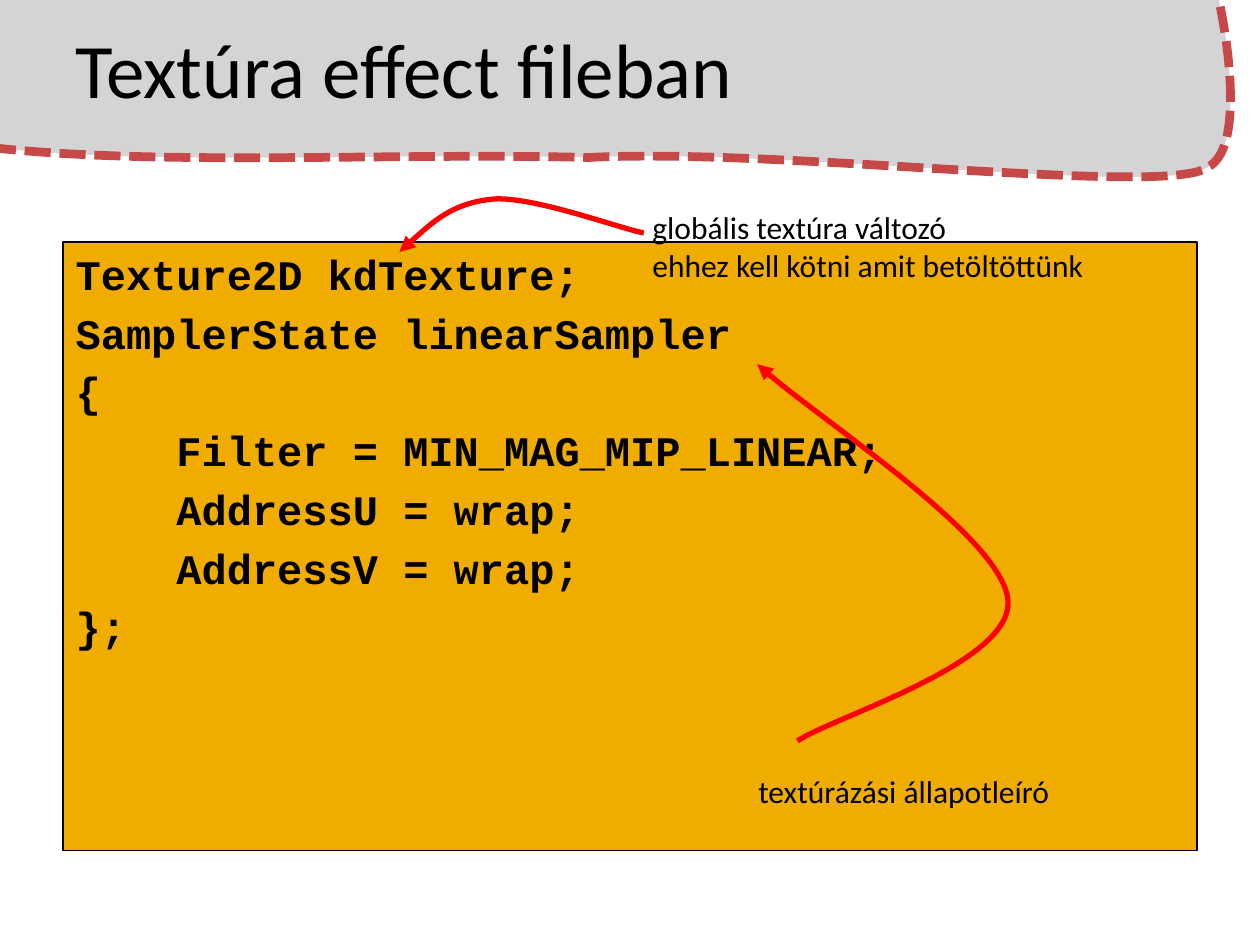
from lxml import etree
from pptx import Presentation
from pptx.dml.color import RGBColor
from pptx.enum.dml import MSO_LINE
from pptx.enum.text import MSO_ANCHOR, MSO_AUTO_SIZE, PP_ALIGN
from pptx.oxml.ns import qn
from pptx.util import Inches, Pt

LEFT, MIDDLE, TOP = PP_ALIGN.LEFT, MSO_ANCHOR.MIDDLE, MSO_ANCHOR.TOP
NO_FIT, GROW = MSO_AUTO_SIZE.NONE, MSO_AUTO_SIZE.SHAPE_TO_FIT_TEXT
SHORT_DASH = MSO_LINE.SQUARE_DOT

THEME = {
    "ink": RGBColor(0, 0, 0),
    "code_fill": RGBColor(0xF0, 0xAD, 0x00),
    "arrow": RGBColor(0xFF, 0, 0),
    "banner": RGBColor(0xD4, 0xD4, 0xD6),
    "stitch": RGBColor(0xC6, 0x48, 0x47),
    "text_font": "Calibri",
    "code_font": "Courier New",
    "title": Pt(44),
    "code": Pt(24),
    "note": Pt(18),
}


def add_curve(points, color, width, corners=()):
    """Draw cubic segments through points (start, then control, control, end);
    corners, if given, continue with straight sides and close the outline."""
    places = [(Inches(x), Inches(y)) for x, y in (*points, *corners)]
    builder = slide.shapes.build_freeform(*places[0], scale=1.0)
    builder.add_line_segments(places[1:], close=bool(corners))
    curve = builder.convert_to_shape()
    sides = list(curve.element.iter(qn("a:lnTo")))
    for first in range(0, len(points) - 1, 3):
        start, *others = sides[first:first + 3]
        start.tag = qn("a:cubicBezTo")
        for side in others:
            start.append(side[0])
            side.getparent().remove(side)
    curve.shadow.inherit = False
    curve.fill.background()
    curve.line.color.rgb = color
    curve.line.width = Pt(width)
    return curve


def style_font(paragraph, face, size, bold=False):
    font = paragraph.font
    font.name, font.size, font.bold = THEME[face], THEME[size], bold
    font.color.rgb = THEME["ink"]
    paragraph.alignment = LEFT


deck = Presentation()
deck.slide_width, deck.slide_height = Inches(10), Inches(7.5)
slide = deck.slides.add_slide(deck.slide_layouts[1])
margin, content_width = Inches(0.5), Inches(9)

# Banner behind the title
banner = add_curve(
    [(-0.08, 1.17), (1.27, 1.32), (3.13, 1.21), (4.67, 1.25),
     (6.18, 1.17), (9.26, 1.56), (9.58, 1.33),
     (9.95, 1.16), (9.67, -0.15), (9.58, -0.33)],
    THEME["stitch"], 5, corners=[(-0.08, -0.33)])
banner.fill.solid()
banner.fill.fore_color.rgb = THEME["banner"]
banner.line.dash_style = SHORT_DASH
slide.shapes.title.element.addprevious(banner.element)

# Title
title = slide.shapes.title
title.left, title.top, title.width, title.height = margin, 0, content_width, Inches(1.25)
title.text_frame.text = "Textúra effect fileban"
title.text_frame.vertical_anchor = MIDDLE
title.text_frame.auto_size = NO_FIT
heading = title.text_frame.paragraphs[0]
heading.line_spacing = Pt(40)
style_font(heading, "text_font", "title")

# Code listing: each line with its indent level
code_lines = [
    (0, "Texture2D kdTexture;"),
    (0, "SamplerState linearSampler"),
    (0, "{"),
    (1, "Filter = MIN_MAG_MIP_LINEAR;"),
    (1, "AddressU = wrap;"),
    (1, "AddressV = wrap;"),
    (0, "};"),
]
listing = slide.placeholders[1]
listing.left, listing.top = margin, Inches(1.92)
listing.width, listing.height = content_width, Inches(4.83)
listing.fill.solid()
listing.fill.fore_color.rgb = THEME["code_fill"]
listing.line.color.rgb = THEME["ink"]
listing.line.width = Pt(0.75)
frame = listing.text_frame
frame.text = "\n".join(text for _, text in code_lines)
frame.auto_size = NO_FIT
frame.vertical_anchor = TOP
for (level, _), paragraph in zip(code_lines, frame.paragraphs):
    style_font(paragraph, "code_font", "code", bold=True)
    properties = paragraph._p.get_or_add_pPr()
    properties.set("marL", str(Inches(0.8 * level)))
    properties.set("indent", "0")
    properties.insert(0, etree.Element(qn("a:buNone")))

# Notes, each with an arrow to the code it explains
notes = [
    ((5.08, 1.6, 3.83, 0.7),
     "globális textúra változó\nehhez kell kötni amit betöltöttünk",
     [(5.11, 1.85), (4.91, 1.81), (4.24, 1.56), (3.92, 1.58),
      (3.59, 1.61), (3.38, 1.81), (3.17, 2)]),
    ((5.92, 6.08, 2.53, 0.4),
     "textúrázási állapotleíró",
     [(6.33, 5.88), (6.61, 5.69), (8.05, 5.26), (8, 4.76),
      (7.95, 4.27), (6.43, 3.28), (6.01, 2.89)]),
]
for place, text, route in notes:
    note = slide.shapes.add_textbox(*map(Inches, place))
    note.text_frame.text = text
    note.text_frame.word_wrap = False
    note.text_frame.auto_size = GROW
    for paragraph in note.text_frame.paragraphs:
        style_font(paragraph, "text_font", "note")
    arrow = add_curve(route, THEME["arrow"], 3)
    etree.SubElement(arrow.line._get_or_add_ln(), qn("a:tailEnd"), type="triangle")

deck.save("out.pptx")
